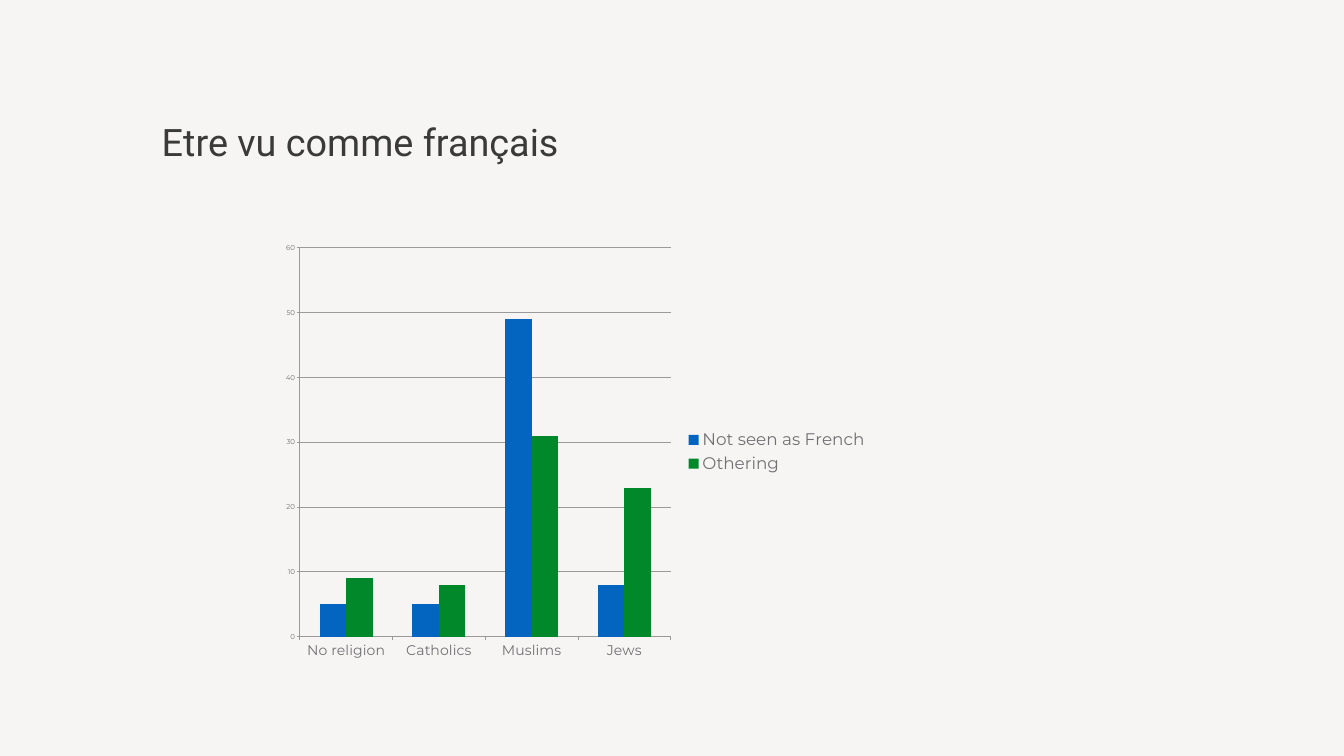
import pptx
import pptx.chart.data
import pptx.dml.color
import pptx.enum.chart
import pptx.enum.text
import pptx.oxml
import pptx.oxml.ns
import pptx.util

EMU_PER_PX = 9525
SLIDE_SIZE = (2560, 1440)
TITLE_BOX = (304, 239, 1731, 228)
CHART_BOX = (522, 448, 1143, 825)
PLOT_FRACTIONS = {"x": 0.043, "y": 0.029, "w": 0.618, "h": 0.898}

BACKGROUND, TITLE_COLOR = "F6F5F3", "3A3B39"
LABEL_COLOR, LINE_COLOR = "717175", "9A9A9A"
CATEGORIES = ["No religion", "Catholics", "Muslims", "Jews"]
SERIES = [
    ("Not seen as French", [5, 5, 49, 8], "0365C0"),
    ("Othering", [9, 8, 31, 23], "00882B"),
]


def px(value):
    return pptx.util.Emu(value * EMU_PER_PX)


def rgb(color):
    return pptx.dml.color.RGBColor.from_string(color)


def format_font(font, name, size, color):
    values = {"name": name, "size": pptx.util.Pt(size), "bold": False}
    for attribute, value in values.items():
        setattr(font, attribute, value)
    font.color.rgb = rgb(color)


def format_line(line):
    line.width = pptx.util.Pt(1)
    line.color.rgb = rgb(LINE_COLOR)


def place_title(slide, box, text):
    title = slide.shapes.title
    for attribute, value in zip(("left", "top", "width", "height"), box):
        setattr(title, attribute, px(value))
    frame = title.text_frame
    frame.text = text
    frame_format = {
        "word_wrap": True,
        "auto_size": pptx.enum.text.MSO_AUTO_SIZE.NONE,
        "vertical_anchor": pptx.enum.text.MSO_ANCHOR.TOP,
    }
    for side in ("left", "top", "right", "bottom"):
        frame_format[f"margin_{side}"] = px(4)
    for attribute, value in frame_format.items():
        setattr(frame, attribute, value)
    paragraph = frame.paragraphs[0]
    paragraph.alignment = pptx.enum.text.PP_ALIGN.LEFT
    paragraph.line_spacing = 0.8
    format_font(paragraph.runs[0].font, "Roboto", 54, TITLE_COLOR)


def fix_plot_area(chart, fractions):
    """Pin the inner plot area to fractions of the chart box."""
    plot_area = chart._chartSpace.chart.plotArea
    for old_layout in plot_area.findall(pptx.oxml.ns.qn("c:layout")):
        plot_area.remove(old_layout)
    modes = "".join(f'<c:{key}Mode val="edge"/>' for key in "xy")
    sizes = "".join(f'<c:{key} val="{value}"/>' for key, value in fractions.items())
    plot_area.insert(0, pptx.oxml.parse_xml(
        f'<c:layout {pptx.oxml.ns.nsdecls("c")}><c:manualLayout>'
        f'<c:layoutTarget val="inner"/>{modes}{sizes}'
        "</c:manualLayout></c:layout>"
    ))


def format_axes(chart):
    for axis, size in ((chart.category_axis, 20), (chart.value_axis, 10)):
        axis.major_tick_mark = pptx.enum.chart.XL_TICK_MARK.OUTSIDE
        axis.minor_tick_mark = pptx.enum.chart.XL_TICK_MARK.NONE
        format_line(axis.format.line)
        format_font(axis.tick_labels.font, "Montserrat", size, LABEL_COLOR)
    value_axis = chart.value_axis
    scale = {"minimum_scale": 0, "maximum_scale": 60, "major_unit": 10,
             "has_major_gridlines": True}
    for attribute, value in scale.items():
        setattr(value_axis, attribute, value)
    format_line(value_axis.major_gridlines.format.line)


def place_chart(slide, box):
    data = pptx.chart.data.CategoryChartData()
    data.categories = CATEGORIES
    for name, values, _ in SERIES:
        data.add_series(name, values)
    chart = slide.shapes.add_chart(
        pptx.enum.chart.XL_CHART_TYPE.COLUMN_CLUSTERED, *map(px, box), data
    ).chart
    chart.has_title = False
    format_font(chart.font, "Montserrat", 10, LABEL_COLOR)

    plot = chart.plots[0]
    for attribute, value in {"gap_width": 150, "overlap": 0, "vary_by_categories": False}.items():
        setattr(plot, attribute, value)
    for series, (_, _, color) in zip(plot.series, SERIES):
        series.format.fill.solid()
        series.format.fill.fore_color.rgb = rgb(color)

    format_axes(chart)
    chart.has_legend = True
    chart.legend.position = pptx.enum.chart.XL_LEGEND_POSITION.RIGHT
    chart.legend.include_in_layout = False
    format_font(chart.legend.font, "Montserrat", 24, LABEL_COLOR)
    fix_plot_area(chart, PLOT_FRACTIONS)


def main():
    presentation = pptx.Presentation()
    presentation.slide_width, presentation.slide_height = map(px, SLIDE_SIZE)
    title_only = presentation.slide_layouts.get_by_name("Title Only")
    slide = presentation.slides.add_slide(title_only)
    slide.background.fill.solid()
    slide.background.fill.fore_color.rgb = rgb(BACKGROUND)
    place_title(slide, TITLE_BOX, "Etre vu comme français")
    place_chart(slide, CHART_BOX)
    presentation.save("out.pptx")


if __name__ == "__main__":
    main()
